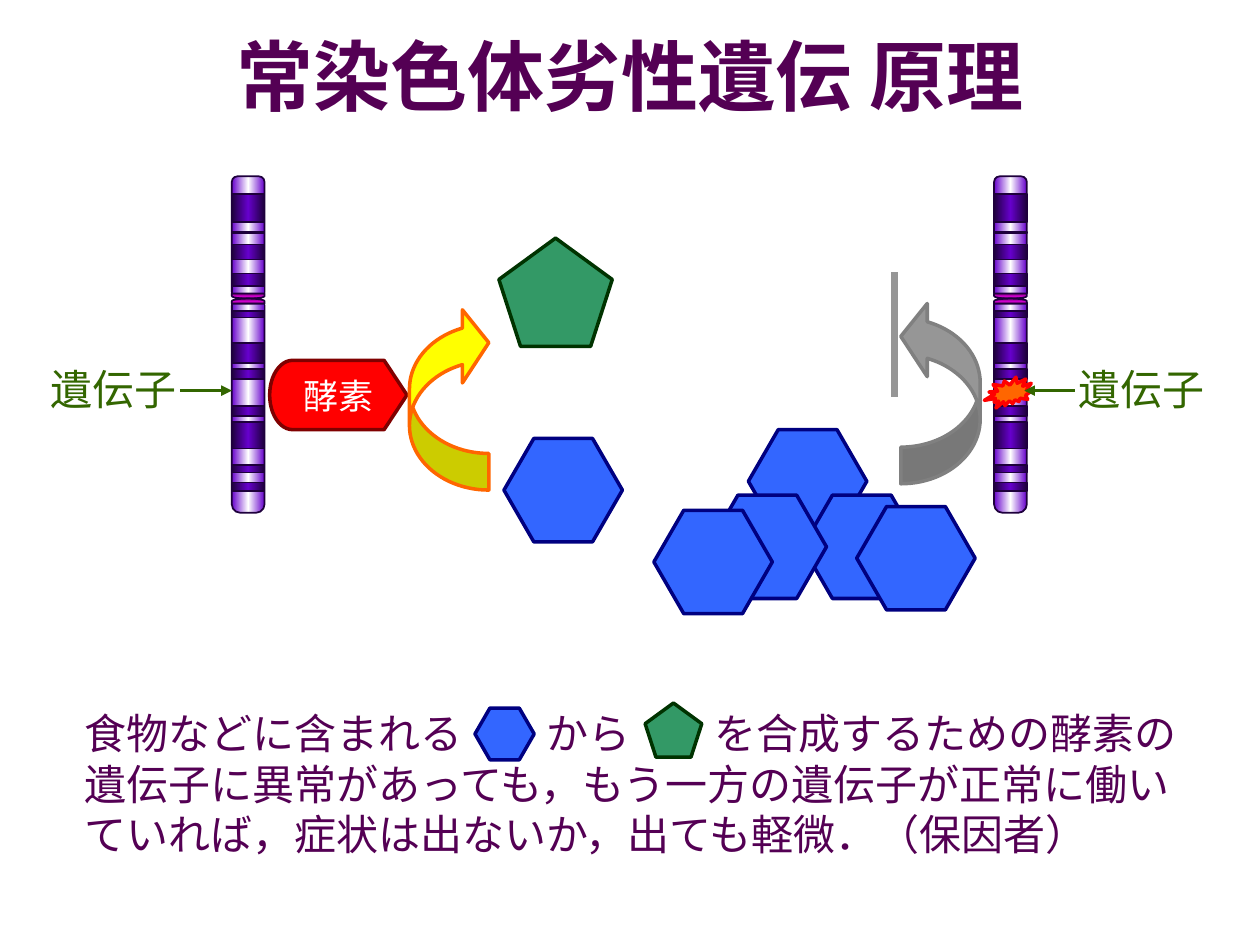
from copy import deepcopy

from lxml import etree
from pptx import Presentation
from pptx.dml.color import RGBColor
from pptx.enum.shapes import MSO_CONNECTOR, MSO_SHAPE
from pptx.enum.text import MSO_ANCHOR, PP_ALIGN
from pptx.oxml.ns import qn
from pptx.util import Inches, Pt

HEXAGON, PENTAGON = MSO_SHAPE.HEXAGON, MSO_SHAPE.REGULAR_PENTAGON
BAND, ARM = MSO_SHAPE.RECTANGLE, MSO_SHAPE.ROUNDED_RECTANGLE
CENTROMERE, MUTATION = MSO_SHAPE.FLOWCHART_DELAY, MSO_SHAPE.EXPLOSION2
ENZYME, REACTION = MSO_SHAPE.FLOWCHART_DISPLAY, MSO_SHAPE.CURVED_RIGHT_ARROW
STRAIGHT = MSO_CONNECTOR.STRAIGHT
LEFT, CENTER = PP_ALIGN.LEFT, PP_ALIGN.CENTER
MIDDLE, TOP = MSO_ANCHOR.MIDDLE, MSO_ANCHOR.TOP

THEME = {
    "light band": ("6600CC", "FFFFFF", "6600CC"),
    "dark band": ("1E003C", "6600CC", "1E003C"),
    "centromere": ("660066", "CC00CC", "660066"),
    "outline": "1E003C",
    "substrate": ("3366FF", "000080"),
    "product": ("339966", "003300"),
    "enzyme": ("FF0000", "800000"),
    "active": ("FFFF00", "FF6600"),
    "inactive": ("969696", "808080"),
    "mutation": ("FF6600", "FF0000"),
    "gene": "336600",
    "prose": "540054",
    "white": "FFFFFF",
    "sans": "Arial",
    "japanese": "Noto Sans CJK JP",
    "title size": Pt(44),
    "body size": Pt(24),
    "enzyme size": Pt(20),
}

deck = Presentation()
deck.slide_width, deck.slide_height = Inches(10), Inches(7.5)
slide = deck.slides.add_slide(deck.slide_layouts[6])
COL, ROW = deck.slide_width / 100, deck.slide_height / 75


def draw(canvas, kind, box, colours, weight=2, adjust=(), flips=(), turn=0):
    left, top, width, height = box
    part = canvas.add_shape(kind, int(left * COL), int(top * ROW), int(width * COL), int(height * ROW))
    part.shadow.inherit = False
    part.rotation = turn
    for index, value in enumerate(adjust):
        part.adjustments[index] = value
    for flip in flips:
        part._element.spPr.xfrm.set(flip, "1")
    paint, edge = colours
    if isinstance(paint, str):
        part.fill.solid()
        part.fill.fore_color.rgb = RGBColor.from_string(paint)
    else:
        part.fill.gradient()
        part.fill.gradient_angle = 0
        stops = part._element.spPr.find(".//" + qn("a:gsLst"))
        stops.insert(1, deepcopy(stops[0]))
        for stop, position, colour in zip(part.fill.gradient_stops, (0, 0.5, 1), paint):
            stop.position = position
            stop.color.rgb = RGBColor.from_string(colour)
    part.line.color.rgb = RGBColor.from_string(edge)
    part.line.width = Pt(weight)
    return part


def write(holder, words, colour, frame_format, paragraph_format, font_format):
    frame = holder.text_frame
    paragraph = frame.paragraphs[0]
    run = paragraph.add_run()
    run.text = words
    run.font.color.rgb = RGBColor.from_string(colour)
    for target, values in ((frame, frame_format), (paragraph, paragraph_format), (run.font, font_format)):
        for attribute, value in values.items():
            setattr(target, attribute, value)
    etree.SubElement(run._r.rPr, qn("a:ea")).set("typeface", THEME["japanese"])


ARM_WIDTH = 2.6
ARMS = ((14, 9.6, 0.167), (23.6, 17.1, 0.26))
BANDS = {
    "light band": ((24, 0.9), (22.4, 0.9)),
    "dark band": (
        (21.7, 1), (24.7, 0.5), (27.2, 1.6), (19.4, 1.2), (18.4, 0.1), (15.4, 2.2),
        (29.3, 0.8), (32.2, 0.8), (33.5, 2.1), (36.9, 0.6), (38.3, 0.7),
    ),
}
for left in (18.4, 78.9):
    chromosome = slide.shapes.add_group_shape().shapes
    for top, height, rounding in ARMS:
        draw(chromosome, ARM, (left, top, ARM_WIDTH, height),
             (THEME["light band"], THEME["outline"]), 1, (rounding,))
    for tone, bands in BANDS.items():
        for top, height in bands:
            draw(chromosome, BAND, (left, top, ARM_WIDTH, height), (THEME[tone], THEME["outline"]), 1)
    for top, turn, flips in ((22.2, 90, ("flipV",)), (22.6, 270, ())):
        draw(chromosome, CENTROMERE, (left + 1.1, top, 0.4, ARM_WIDTH),
             (THEME["centromere"], THEME["outline"]), 1, flips=flips, turn=turn)

draw(slide.shapes, MUTATION, (78.1, 30, 3.9, 2.4), THEME["mutation"], flips=("flipH",), turn=330)
enzyme = draw(slide.shapes, ENZYME, (21.4, 28.6, 10.9, 5.5), THEME["enzyme"], flips=("flipH",))
write(enzyme, "酵素", THEME["white"],
      {"word_wrap": False, "vertical_anchor": MIDDLE},
      {"alignment": CENTER},
      {"size": THEME["enzyme size"], "name": THEME["sans"]})

SUBSTRATE_CUT = (0.289, 1.155)
REACTION_BEND = (0.461, 0.922, 0.333)
draw(slide.shapes, HEXAGON, (40, 34.8, 9.4, 8.2), THEME["substrate"], adjust=SUBSTRATE_CUT)
draw(slide.shapes, PENTAGON, (39.6, 18.9, 9, 8.6), THEME["product"])
for left, top, state, flips in (
    (32.5, 24.3, "active", ("flipV",)),
    (71.5, 23.8, "inactive", ("flipH", "flipV")),
):
    draw(slide.shapes, REACTION, (left, top, 6.3, 14.6), THEME[state], adjust=REACTION_BEND, flips=flips)
for left, top in ((59.4, 34.1), (63.7, 39.3), (56.2, 39.3), (51.9, 40.5), (68, 40.2)):
    draw(slide.shapes, HEXAGON, (left, top, 9.4, 8.2), THEME["substrate"],
         adjust=SUBSTRATE_CUT, flips=("flipH",))
draw(slide.shapes, HEXAGON, (37.7, 56.2, 4.7, 4.1), THEME["substrate"], adjust=SUBSTRATE_CUT)
draw(slide.shapes, PENTAGON, (51.2, 55.8, 4.5, 4.3), THEME["product"])

GENE = (
    "遺伝子", THEME["gene"],
    {"word_wrap": False, "vertical_anchor": TOP},
    {"alignment": LEFT, "line_spacing": Pt(29)},
    {"size": THEME["body size"], "name": THEME["sans"]},
)
TITLE = (
    "常染色体劣性遺伝 原理", THEME["prose"],
    {"word_wrap": True, "vertical_anchor": MIDDLE},
    {"alignment": CENTER},
    {"size": THEME["title size"], "name": THEME["japanese"], "bold": True},
)
EXPLANATION = (
    "食物などに含まれる　　から　　を合成するための酵素の遺伝子に異常があっても，"
    "もう一方の遺伝子が正常に働いていれば，症状は出ないか，出ても軽微．（保因者）",
    THEME["prose"],
    {"word_wrap": True, "vertical_anchor": MIDDLE},
    {"alignment": LEFT, "line_spacing": Pt(29)},
    {"size": THEME["body size"], "name": THEME["japanese"]},
)
for (left, top, width, height), passage in (
    ((3, 28.3, 12, 5), GENE),
    ((84.6, 28.3, 12, 5), GENE),
    ((2.8, 2, 94.5, 7.9), TITLE),
    ((5.7, 55.6, 89.3, 13.1), EXPLANATION),
):
    holder = slide.shapes.add_textbox(int(left * COL), int(top * ROW), int(width * COL), int(height * ROW))
    write(holder, *passage)

for start, end, colour, weight, pointed in (
    ((14.3, 31), (18.4, 31), THEME["gene"], 2, True),
    ((85.3, 31), (81.3, 31), THEME["gene"], 2, True),
    ((71, 21.6), (71, 31.5), THEME["inactive"][0], 4, False),
):
    link = slide.shapes.add_connector(
        STRAIGHT, int(start[0] * COL), int(start[1] * ROW), int(end[0] * COL), int(end[1] * ROW))
    link.line.color.rgb = RGBColor.from_string(colour)
    link.line.width = Pt(weight)
    if pointed:
        etree.SubElement(link.line._get_or_add_ln(), qn("a:tailEnd")).set("type", "triangle")
    etree.SubElement(link._element.spPr, qn("a:effectLst"))

deck.save("out.pptx")
